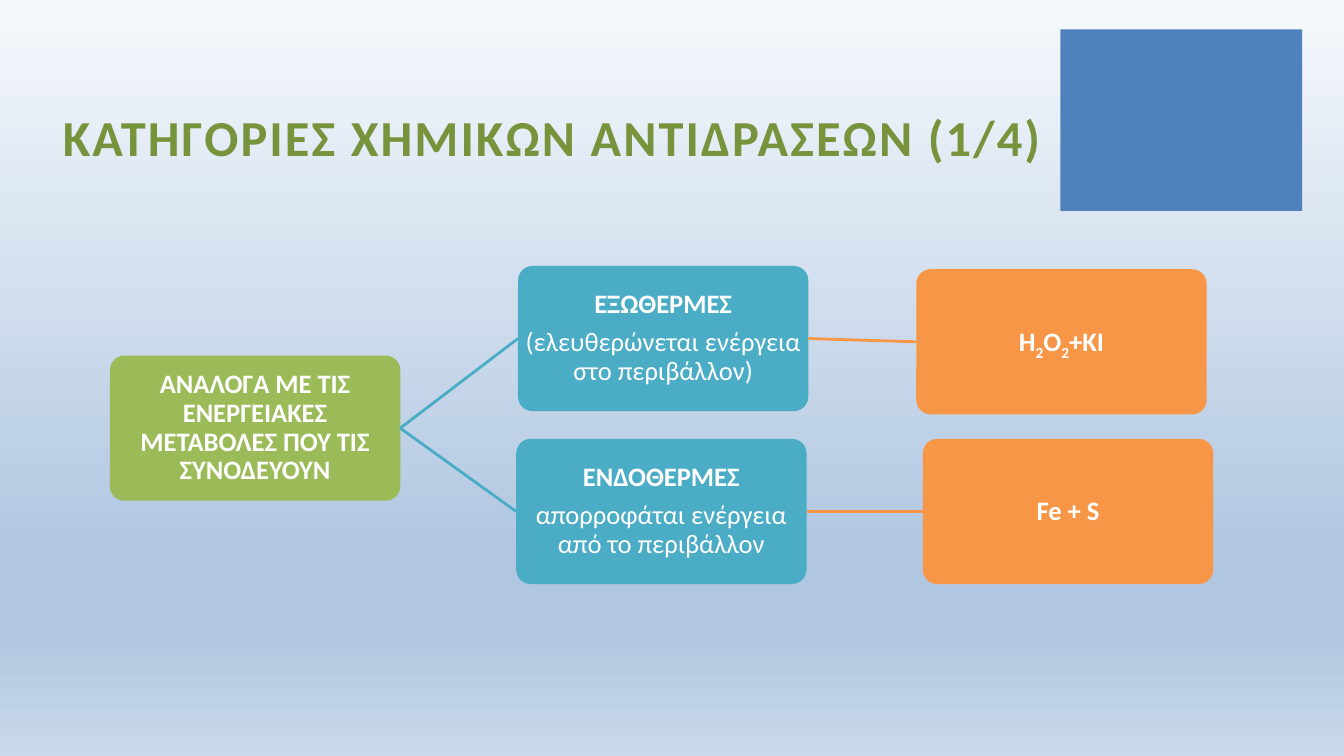
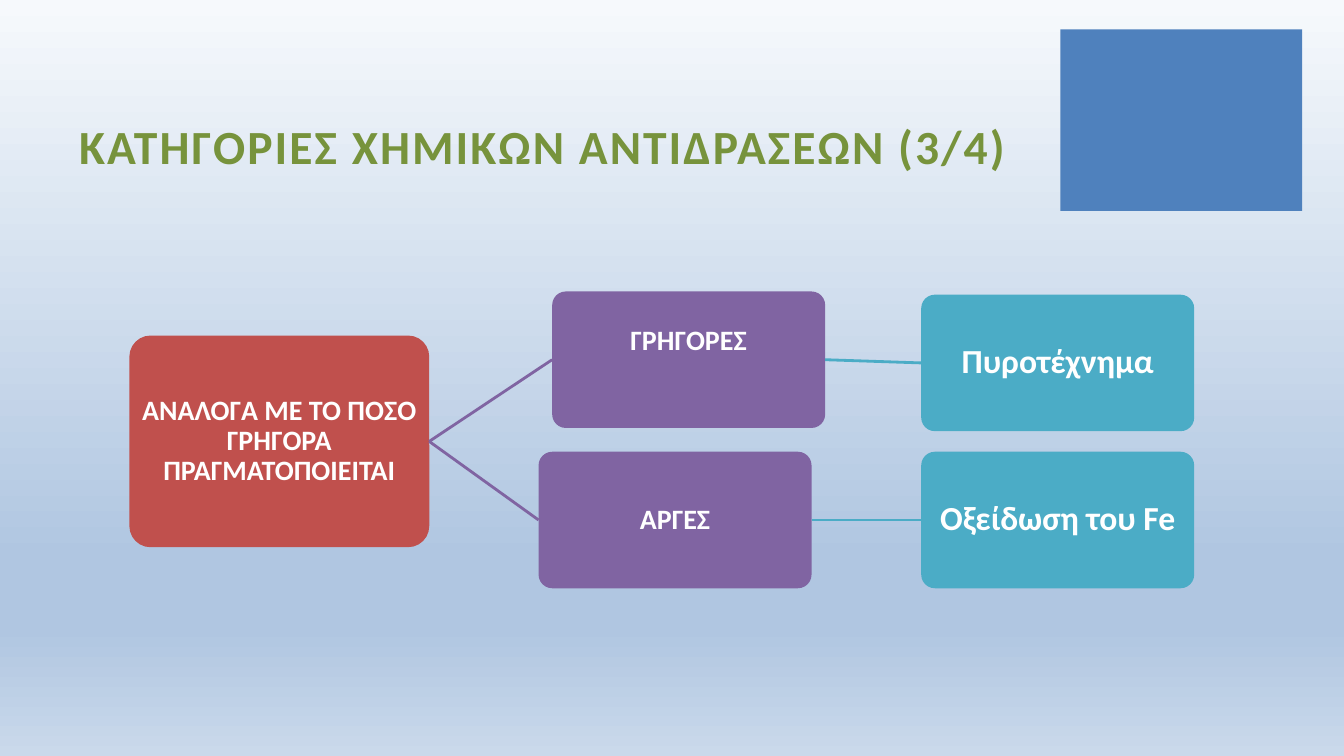
"""Build two slides that classify chemical reactions as branching diagrams."""
import itertools

import lxml.etree
import pptx
import pptx.dml.color
import pptx.enum.shapes
import pptx.enum.text
import pptx.oxml.ns
import pptx.util

Pt = pptx.util.Pt
RGB = pptx.dml.color.RGBColor.from_string
qn = pptx.oxml.ns.qn

FONT = "Calibri"
COLORS = {
    "title": "77933C", "emblem": "4F81BD", "text": "FFFFFF",
    "green": "9BBB59", "teal": "4BACC6", "orange": "F79646",
    "red": "C0504D", "purple": "8064A2",
}
BACKGROUND_STOPS = [(0, "F6F9FC"), (74, "B0C6E1"), (83, "B0C6E1"), (100, "CAD9EB")]
LEFT_SITE, RIGHT_SITE = 1, 3

DIAGRAMS = [
    {
        "title": "ΚΑΤΗΓΟΡΙΕΣ ΧΗΜΙΚΩΝ ΑΝΤΙΔΡΑΣΕΩΝ (1/4)",
        "title_box": (0, 42.5, 789, 80), "title_size": 36,
        "root": ("ΑΝΑΛΟΓΑ ΜΕ ΤΙΣ ΕΝΕΡΓΕΙΑΚΕΣ ΜΕΤΑΒΟΛΕΣ ΠΟΥ ΤΙΣ ΣΥΝΟΔΕΥΟΥΝ",
                 (78.5, 254, 207.4, 103.7), "green"),
        "branch_size": (207.4, 103.7), "size": 19, "example_size": 19,
        "branch_color": "teal", "example_color": "orange",
        "branches": [
            ("ΕΞΩΘΕΡΜΕΣ\n(ελευθερώνεται ενέργεια στο περιβάλλον)",
             (370, 190), 1, "Η2Ο2+ΚΙ", (654.5, 192.3)),
            ("ΕΝΔΟΘΕΡΜΕΣ\nαπορροφάται ενέργεια από το περιβάλλον",
             (368.7, 313.5), 1, "Fe + S", (659.2, 313.5)),
        ],
    },
    {
        "title": "ΚΑΤΗΓΟΡΙΕΣ ΧΗΜΙΚΩΝ ΑΝΤΙΔΡΑΣΕΩΝ (3/4)",
        "title_box": (46, 38, 683.5, 90), "title_size": 34,
        "root": ("ΑΝΑΛΟΓΑ ΜΕ ΤΟ ΠΟΣΟ ΓΡΗΓΟΡΑ ΠΡΑΓΜΑΤΟΠΟΙΕΙΤΑΙ",
                 (92.4, 239.7, 214.2, 151.2), "red"),
        "branch_size": (195, 97.5), "size": 20, "example_size": 24,
        "branch_color": "purple", "example_color": "teal",
        "branches": [
            ("ΓΡΗΓΟΡΕΣ", (394.4, 208.2), 27, "Πυροτέχνημα", (658, 210.5)),
            ("ΑΡΓΕΣ", (384.7, 322.7), 1, "Oξείδωση του Fe", (658, 322.7)),
        ],
    },
]


def add_box(slide, text, box, color, size, bottom=1):
    """Add a rounded box with a bold first paragraph and subscript digits."""
    shape = slide.shapes.add_shape(
        pptx.enum.shapes.MSO_SHAPE.ROUNDED_RECTANGLE, *map(Pt, box))
    shape.adjustments[0] = 0.1
    shape.shadow.inherit = False
    shape.fill.solid()
    shape.fill.fore_color.rgb = RGB(COLORS[color])
    shape.line.fill.background()
    frame = shape.text_frame
    frame.word_wrap = True
    frame.vertical_anchor = pptx.enum.text.MSO_ANCHOR.MIDDLE
    frame.margin_left = frame.margin_top = frame.margin_right = Pt(1)
    frame.margin_bottom = Pt(bottom)
    lines = text.split("\n")
    for number, line in enumerate(lines):
        paragraph = frame.paragraphs[0] if number == 0 else frame.add_paragraph()
        paragraph.alignment = pptx.enum.text.PP_ALIGN.CENTER
        paragraph.line_spacing = 0.9
        if number < len(lines) - 1:
            paragraph.space_after = Pt(0.35 * size)
        for is_digit, letters in itertools.groupby(line, str.isdigit):
            run = paragraph.add_run()
            run.text = "".join(letters)
            run.font.name = FONT
            run.font.size = Pt(size)
            run.font.bold = number == 0
            run.font.color.rgb = RGB(COLORS["text"])
            if is_digit:
                run.font._element.set("baseline", "-25000")
    return shape


def link(slide, source, target, color):
    """Join the right side of one box to the left side of another."""
    connector = slide.shapes.add_connector(
        pptx.enum.shapes.MSO_CONNECTOR.STRAIGHT, 0, 0, 0, 0)
    connector.begin_connect(source, RIGHT_SITE)
    connector.end_connect(target, LEFT_SITE)
    connector.line.color.rgb = RGB(COLORS[color])
    connector.line.width = Pt(2)
    lxml.etree.SubElement(connector._element.spPr, qn("a:effectLst"))


prs = pptx.Presentation()
prs.slide_width, prs.slide_height = Pt(960), Pt(540)
layout = prs.slide_layouts[5]

background = prs.slide_master.background.fill
background.gradient()
background.gradient_angle = 270
stop_list = next(prs.slide_master._element.iter(qn("a:gsLst")))
for stop in list(stop_list):
    stop_list.remove(stop)
for percent, color in BACKGROUND_STOPS:
    stop = lxml.etree.SubElement(stop_list, qn("a:gs"), pos=str(percent * 1000))
    lxml.etree.SubElement(stop, qn("a:srgbClr"), val=color)

slides = [prs.slides.add_slide(layout) for diagram in DIAGRAMS]

emblem = slides[0].shapes.add_shape(
    pptx.enum.shapes.MSO_SHAPE.RECTANGLE, Pt(757.4), Pt(21), Pt(172.8), Pt(129.6))
emblem.shadow.inherit = False
emblem.fill.solid()
emblem.fill.fore_color.rgb = RGB(COLORS["emblem"])
emblem.line.fill.background()
layout.shapes._spTree.append(emblem._element)

for slide, diagram in zip(slides, DIAGRAMS):
    title = slide.shapes.title
    title.left, title.top, title.width, title.height = map(Pt, diagram["title_box"])
    title.text_frame.text = diagram["title"]
    title.text_frame.vertical_anchor = pptx.enum.text.MSO_ANCHOR.BOTTOM
    heading = title.text_frame.paragraphs[0]
    heading.alignment = pptx.enum.text.PP_ALIGN.CENTER
    font = heading.runs[0].font
    font.name = FONT
    font.size = Pt(diagram["title_size"])
    font.bold = True
    font.color.rgb = RGB(COLORS["title"])
    font._element.set("spc", "150")

    criterion, root_box, root_color = diagram["root"]
    root = add_box(slide, criterion, root_box, root_color, diagram["size"])
    for category, category_at, bottom, example, example_at in diagram["branches"]:
        branch = add_box(slide, category, category_at + diagram["branch_size"],
                         diagram["branch_color"], diagram["size"], bottom)
        leaf = add_box(slide, example, example_at + diagram["branch_size"],
                       diagram["example_color"], diagram["example_size"])
        link(slide, root, branch, diagram["branch_color"])
        link(slide, branch, leaf, diagram["example_color"])

prs.save("out.pptx")
